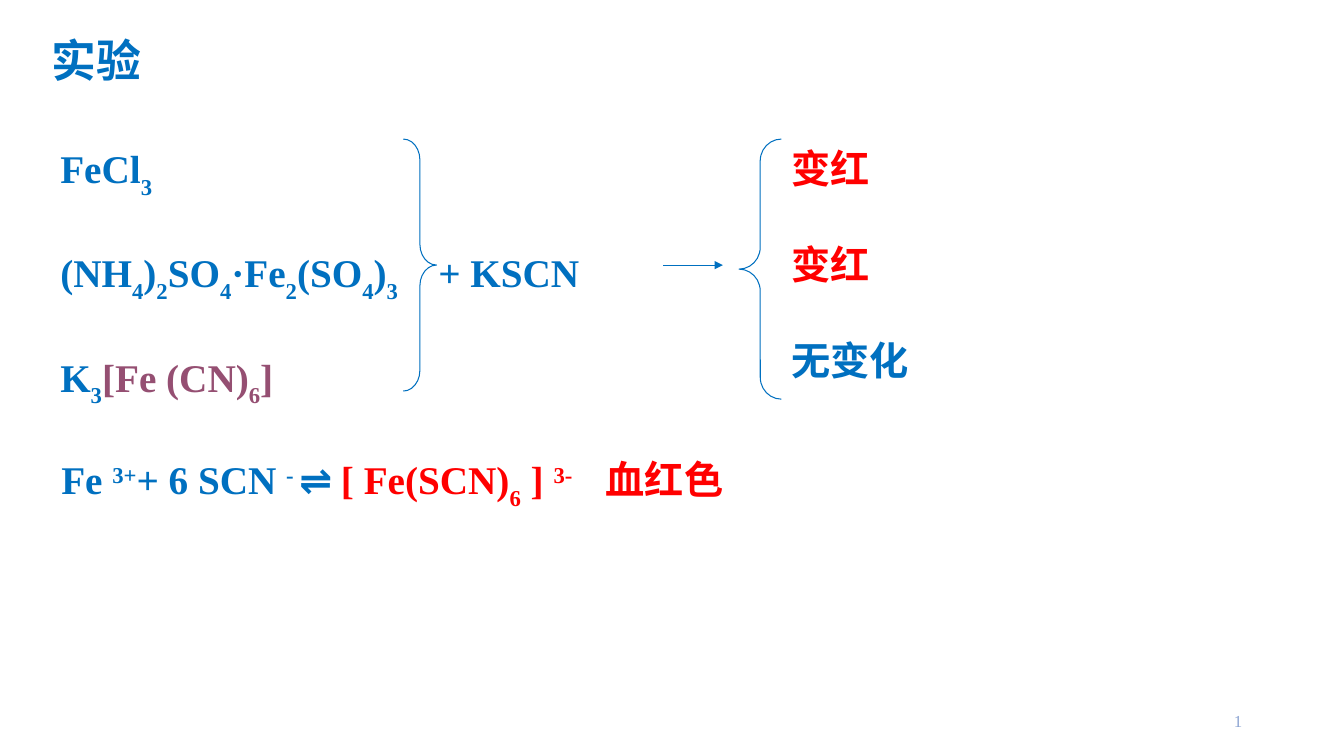
from lxml.etree import SubElement
from pptx import Presentation
from pptx.dml.color import RGBColor
from pptx.enum.shapes import MSO_CONNECTOR, MSO_SHAPE
from pptx.enum.text import MSO_ANCHOR, PP_ALIGN
from pptx.oxml.ns import qn
from pptx.util import Inches, Pt

COLORS = {"blue": "0070C0", "red": "FF0000", "purple": "954F72", "number": "8CA4D2"}
SUB, SUP = -30000, 30000

deck = Presentation()
deck.slide_width, deck.slide_height = Inches(13.33), Inches(7.5)
page = deck.slides.add_slide(deck.slide_layouts[6])


def add_box(left, top, width, height, anchor=MSO_ANCHOR.TOP):
    box = page.shapes.add_textbox(Inches(left), Inches(top), Inches(width), Inches(height))
    box.text_frame.word_wrap = True
    box.text_frame.vertical_anchor = anchor
    return box.text_frame


def write(para, spans, size=28, color="blue", bold=True, align=PP_ALIGN.JUSTIFY, tab=None):
    para.alignment = align
    if tab:
        stops = SubElement(para._p.get_or_add_pPr(), qn("a:tabLst"))
        SubElement(stops, qn("a:tab"), pos=str(Inches(tab)), algn="l")
    para.font.name = "Times New Roman"
    para.font.size = Pt(size)
    para.font.bold = bold
    para.font.color.rgb = RGBColor.from_string(COLORS[color])
    for text, baseline, tint in spans:
        span = para.add_run()
        span.text = text
        if baseline:
            span.font._element.set("baseline", str(baseline))
        if tint:
            span.font.color.rgb = RGBColor.from_string(COLORS[tint])
        if "⇌" in text:
            span.font.name = "Cabin"


reagents = [
    [("FeCl", 0, None), ("3", SUB, None)],
    [("(NH", 0, None), ("4", SUB, None), (")", 0, None), ("2", SUB, None),
     ("SO", 0, None), ("4", SUB, None), ("·Fe", 0, None), ("2", SUB, None),
     ("(SO", 0, None), ("4", SUB, None), (")", 0, None), ("3", SUB, None),
     ("\t+ KSCN", 0, None)],
    [("K", 0, None), ("3", SUB, None), ("[Fe (CN)", 0, "purple"),
     ("6", SUB, "purple"), ("]", 0, "purple")],
]
results = [[("变红", 0, "red")], [("变红", 0, "red")], [("无变化", 0, None)]]
for place, lines in [((0.5, 1.38, 9.5, 5.05), reagents), ((7.75, 1.38, 2.25, 2.46), results)]:
    frame = add_box(*place)
    for index, spans in enumerate(lines):
        para = frame.add_paragraph() if index else frame.paragraphs[0]
        if index:
            para.space_before = Pt(35)
        write(para, spans, tab=3.75 if lines is reagents else None)

for kind, left, width, height, curve in [
    (MSO_SHAPE.RIGHT_BRACE, 4, 0.33, 2.5, 0.625),
    (MSO_SHAPE.LEFT_BRACE, 7.33, 0.42, 2.58, 0.517),
]:
    brace = page.shapes.add_shape(kind, Inches(left), Inches(1.38), Inches(width), Inches(height))
    brace.adjustments[0] = curve
    brace.adjustments[1] = 0.5
    brace.shadow.inherit = False
    brace.fill.background()
    brace.line.color.rgb = RGBColor.from_string(COLORS["blue"])
    brace.line.width = Pt(0.75)

arrow = page.shapes.add_connector(
    MSO_CONNECTOR.STRAIGHT, Inches(6.58), Inches(2.63), Inches(7.17), Inches(2.63))
arrow.line.color.rgb = RGBColor.from_string(COLORS["blue"])
arrow.line.width = Pt(0.75)
SubElement(arrow.line._get_or_add_ln(), qn("a:tailEnd"), type="triangle")
SubElement(arrow._element.spPr, qn("a:effectLst"))

equation = add_box(0.51, 4.47, 8.83, 1.08)
write(equation.paragraphs[0], [
    ("Fe ", 0, None), ("3+", SUP, None), ("+ 6 SCN ", 0, None), ("- ", SUP, None),
    ("⇌ ", 0, None), ("[ Fe(SCN)", 0, "red"), ("6", SUB, "red"), (" ] ", 0, "red"),
    ("3-", SUP, "red"), ("\t血红色", 0, "red"),
], tab=5.4)

title = add_box(0.41, 0.38, 11.5, 0.49, MSO_ANCHOR.MIDDLE)
title.paragraphs[0].line_spacing = 0.9
write(title.paragraphs[0], [("实验", 0, None)], size=32, align=PP_ALIGN.LEFT)

number = add_box(9.42, 6.95, 3, 0.4, MSO_ANCHOR.MIDDLE)
write(number.paragraphs[0], [("1", 0, None)], size=12, color="number", bold=False,
      align=PP_ALIGN.RIGHT)

deck.save("out.pptx")
